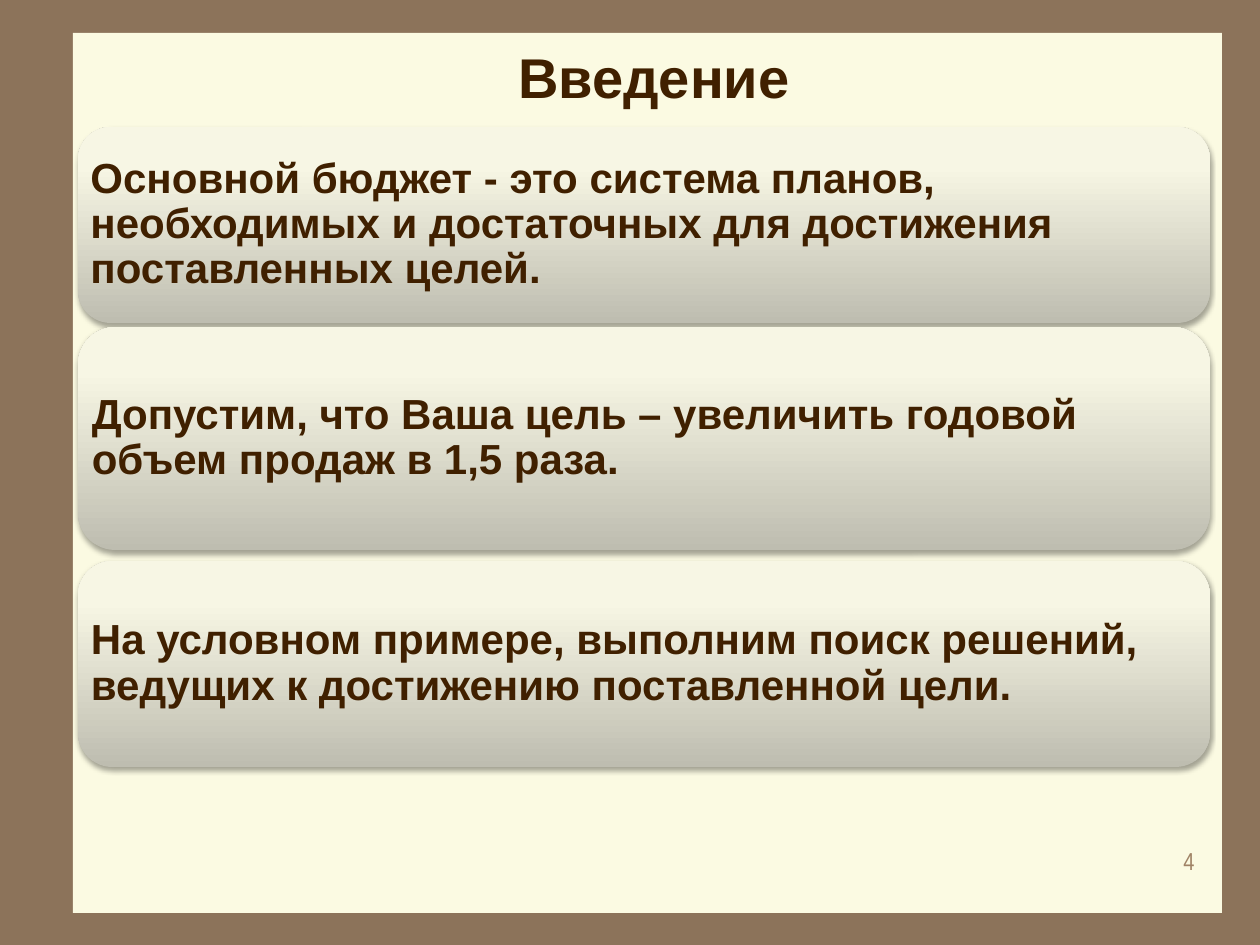
from dataclasses import dataclass

from lxml import etree
from pptx import Presentation
from pptx.dml.color import RGBColor
from pptx.enum.shapes import MSO_SHAPE
from pptx.enum.text import MSO_ANCHOR, PP_ALIGN
from pptx.oxml.ns import qn
from pptx.util import Pt

RECTANGLE = MSO_SHAPE.RECTANGLE
ROUNDED_RECTANGLE = MSO_SHAPE.ROUNDED_RECTANGLE
MIDDLE = MSO_ANCHOR.MIDDLE
LEFT, CENTER, RIGHT = PP_ALIGN.LEFT, PP_ALIGN.CENTER, PP_ALIGN.RIGHT
PX = 914400 // 126


@dataclass(frozen=True)
class Theme:
    background: str = "8C735A"
    panel: str = "FBFAE2"
    text: str = "402000"
    number: str = "A08366"
    shadow: str = "000000"
    card_stops: tuple = ((0, "BEBDB0"), (80, "F7F6E4"), (100, "F9F8E5"))
    font: str = "Arial"
    number_font: str = "Arial Narrow"
    title_size: int = 32
    card_size: int = 24
    number_size: int = 14


def format_paragraph(paragraph, alignment, name, size, color, bold):
    paragraph.alignment = alignment
    paragraph.font.name = name
    paragraph.font.size = Pt(size)
    paragraph.font.bold = bold
    paragraph.font.color.rgb = RGBColor.from_string(color)


def add_color(parent, color):
    return etree.SubElement(parent, qn("a:srgbClr"), val=color)


theme = Theme()
presentation = Presentation()
presentation.slide_width = 1260 * PX
presentation.slide_height = 945 * PX
slide = presentation.slides.add_slide(presentation.slide_layouts[5])
slide.background.fill.solid()
slide.background.fill.fore_color.rgb = RGBColor.from_string(theme.background)

panel = slide.shapes.add_shape(RECTANGLE, 73 * PX, 33 * PX, 1149 * PX, 880 * PX)
panel.shadow.inherit = False
panel.fill.solid()
panel.fill.fore_color.rgb = RGBColor.from_string(theme.panel)
panel.line.fill.background()

title = slide.shapes.title
title.left, title.top, title.width, title.height = 78 * PX, 29 * PX, 1152 * PX, 95 * PX
title.text_frame.text = "Введение"
title.text_frame.vertical_anchor = MIDDLE
format_paragraph(title.text_frame.paragraphs[0], CENTER, theme.font, theme.title_size, theme.text, True)
title._element.addprevious(panel._element)

number = slide.shapes.add_textbox(945 * PX, 840 * PX, 262 * PX, 63 * PX)
number.text_frame.word_wrap = True
number.text_frame.text = "4"
format_paragraph(number.text_frame.paragraphs[0], RIGHT, theme.number_font, theme.number_size, theme.number, False)

cards = [
    (127, 196, "Основной бюджет - это система планов, необходимых и достаточных для достижения поставленных целей."),
    (327, 223, "Допустим, что Ваша цель – увеличить годовой объем продаж в 1,5 раза."),
    (561, 206, "На условном примере, выполним поиск решений, ведущих к достижению поставленной цели."),
]
for top, height, text in cards:
    card = slide.shapes.add_shape(ROUNDED_RECTANGLE, 78 * PX, top * PX, 1132 * PX, height * PX)
    card.line.fill.background()
    card.fill.gradient()
    card.fill.gradient_angle = 90
    stops = card._element.spPr.find(".//" + qn("a:gsLst"))
    for stop in list(stops):
        stops.remove(stop)
    for position, color in theme.card_stops:
        add_color(etree.SubElement(stops, qn("a:gs"), pos=str(position * 1000)), color)

    card.shadow.inherit = False
    effects = card._element.spPr.find(qn("a:effectLst"))
    shadow = etree.SubElement(
        effects, qn("a:outerShdw"), blurRad=str(Pt(3.1)), dist=str(Pt(1.8)), dir="5400000", rotWithShape="0"
    )
    etree.SubElement(add_color(shadow, theme.shadow), qn("a:alpha"), val="35000")

    frame = card.text_frame
    frame.word_wrap = True
    frame.vertical_anchor = MIDDLE
    frame.margin_left = frame.margin_right = frame.margin_top = frame.margin_bottom = 3 * PX
    frame.text = text
    paragraph = frame.paragraphs[0]
    paragraph.line_spacing = 0.9
    format_paragraph(paragraph, LEFT, theme.font, theme.card_size, theme.text, True)

presentation.save("out.pptx")
